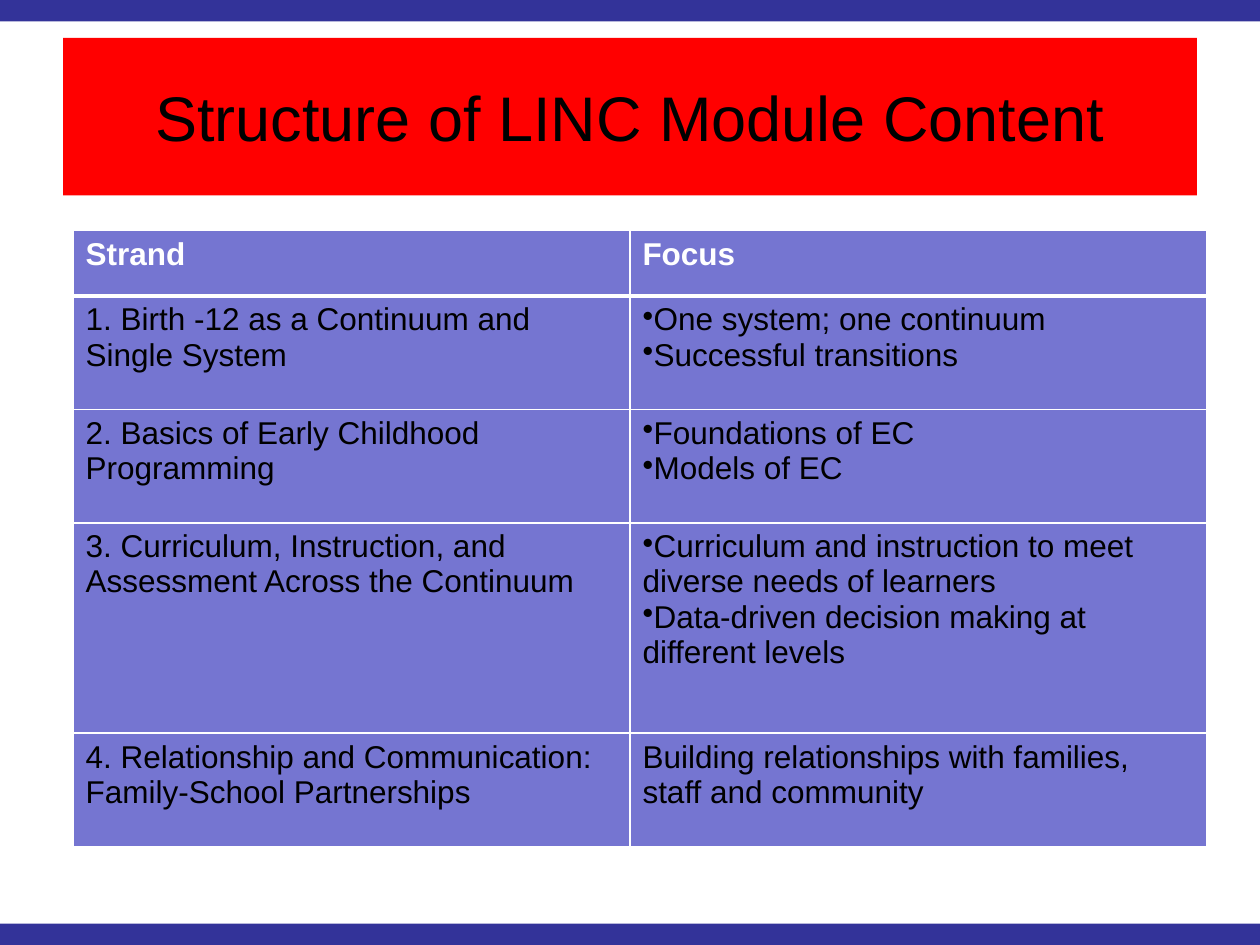
from dataclasses import dataclass

from lxml import etree
from pptx import Presentation
from pptx import util as u
from pptx.dml.color import RGBColor
from pptx.enum import shapes, text
from pptx.oxml import ns


@dataclass(frozen=True)
class Theme:
    font: str = "Arial"
    title_size: int = 36
    body_size: int = 18
    black: str = "000000"
    white: str = "FFFFFF"
    red: str = "FF0000"
    navy: str = "333399"
    violet: str = "7575D1"


theme = Theme()


def write_text(frame, lines, size=theme.body_size, color=theme.black,
               bold=False, align=text.PP_ALIGN.LEFT, bullet=False):
    for index, line in enumerate(lines):
        para = frame.paragraphs[0] if index == 0 else frame.add_paragraph()
        para.alignment = align
        span = para.add_run()
        span.text = line
        span.font.name = theme.font
        span.font.size = u.Pt(size)
        span.font.bold = bold
        span.font.color.rgb = RGBColor.from_string(color)
        if bullet:
            mark = etree.SubElement(para._p.get_or_add_pPr(), ns.qn("a:buChar"))
            mark.set("char", "•")


def set_borders(cell, widths):
    """Draw white cell borders; widths maps L, R, T and B to points."""
    properties = cell._tc.get_or_add_tcPr()
    for index, side in enumerate("LRTB"):
        line = etree.Element(ns.qn(f"a:ln{side}"), w=str(u.Pt(widths[side])))
        fill = etree.SubElement(line, ns.qn("a:solidFill"))
        etree.SubElement(fill, ns.qn("a:srgbClr"), val=theme.white)
        properties.insert(index, line)


deck = Presentation()
deck.slide_width, deck.slide_height = u.Inches(10), u.Inches(7.5)
page = deck.slides.add_slide(deck.slide_layouts[5])

# Title
title = page.shapes.title
title.left, title.top = u.Inches(0.5), u.Inches(0.3)
title.width, title.height = u.Inches(9), u.Inches(1.25)
title.fill.solid()
title.fill.fore_color.rgb = RGBColor.from_string(theme.red)
title.text_frame.auto_size = text.MSO_AUTO_SIZE.NONE
title.text_frame.vertical_anchor = text.MSO_ANCHOR.MIDDLE
write_text(title.text_frame, ["Structure of LINC Module Content"],
           size=theme.title_size, align=text.PP_ALIGN.CENTER)

# Strands and their focus; several focus lines become bullets
rows = [
    ("Strand", ["Focus"]),
    ("1. Birth -12 as a Continuum and Single System",
     ["One system; one continuum", "Successful transitions"]),
    ("2. Basics of Early Childhood Programming",
     ["Foundations of EC", "Models of EC"]),
    ("3. Curriculum, Instruction, and Assessment Across the Continuum",
     ["Curriculum and instruction to meet diverse needs of learners",
      "Data-driven decision making at different levels"]),
    ("4. Relationship and Communication: Family-School Partnerships",
     ["Building relationships with families, staff and community"]),
]
column_widths = [4.42, 4.58]
row_heights = [0.52, 0.9, 0.9, 1.67, 0.9]

table = page.shapes.add_table(
    len(rows), len(column_widths), u.Inches(0.58), u.Inches(1.83),
    u.Inches(sum(column_widths)), u.Inches(sum(row_heights))).table
for column, width in zip(table.columns, column_widths):
    column.width = u.Inches(width)
for row, height in zip(table.rows, row_heights):
    row.height = u.Inches(height)

for row_index, (strand, focus) in enumerate(rows):
    header = row_index == 0
    for column_index, lines in enumerate([[strand], focus]):
        cell = table.cell(row_index, column_index)
        cell.fill.solid()
        cell.fill.fore_color.rgb = RGBColor.from_string(theme.violet)
        write_text(cell.text_frame, lines, bold=header,
                   color=theme.white if header else theme.black,
                   bullet=len(lines) > 1)
        set_borders(cell, {"L": 1, "R": 1, "T": 3 if row_index == 1 else 1,
                           "B": 3 if header else 1})

# Bands along the top and bottom edges
band_height = 0.17
for top in (0, 7.5 - band_height):
    band = page.shapes.add_shape(shapes.MSO_SHAPE.RECTANGLE, 0, u.Inches(top),
                                 deck.slide_width, u.Inches(band_height))
    band.shadow.inherit = False
    band.fill.solid()
    band.fill.fore_color.rgb = RGBColor.from_string(theme.navy)
    band.line.fill.background()

deck.save("out.pptx")
